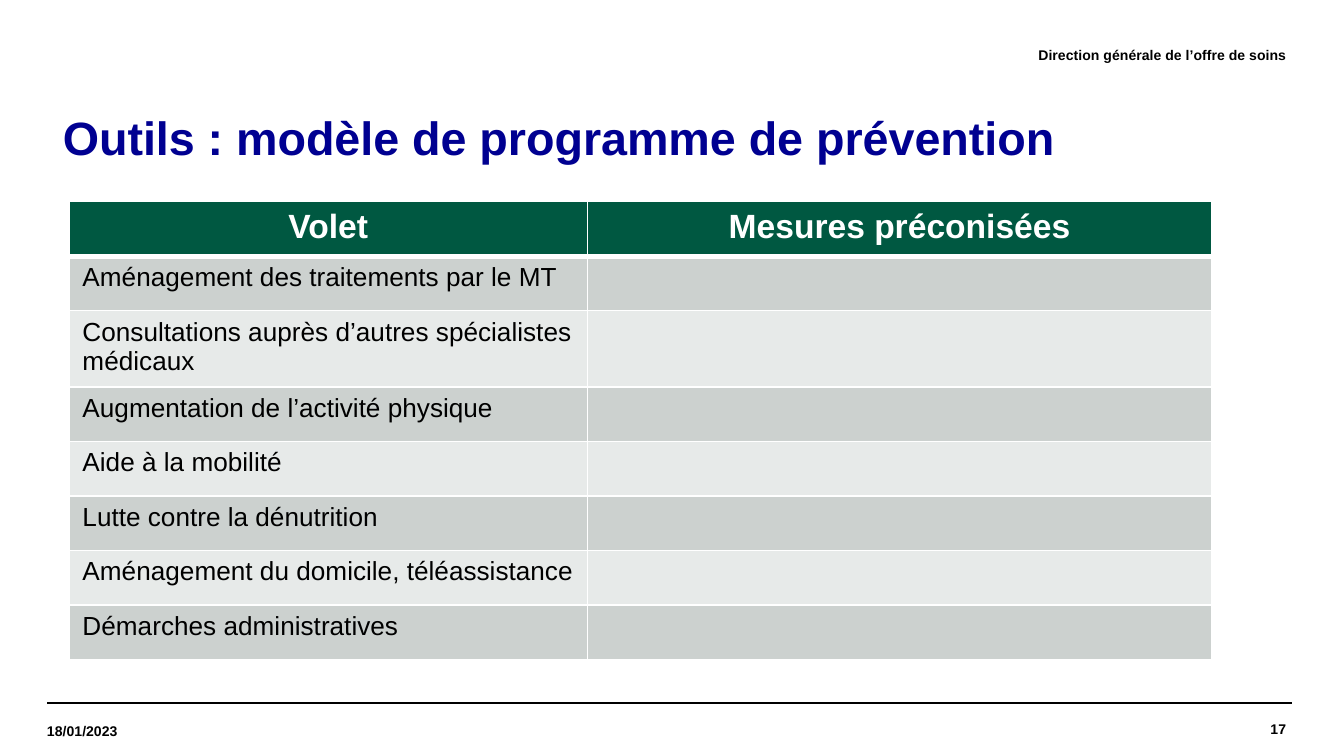
from dataclasses import dataclass

from lxml import etree
from pptx import Presentation
from pptx.dml.color import RGBColor
from pptx.enum import shapes, text
from pptx.oxml.ns import qn
from pptx.util import Pt


@dataclass(frozen=True)
class Theme:
    font: str = "Arial"
    black: str = "000000"
    white: str = "FFFFFF"
    title: str = "000091"
    header: str = "005841"
    bands: tuple = ("CCD1CF", "E7EAE9")
    small_size: float = 7.5
    title_size: float = 25
    header_size: float = 18
    body_size: float = 14
    rule_width: float = 0.8


@dataclass(frozen=True)
class Label:
    words: str
    left: float
    top: float
    width: float
    height: float
    align: text.PP_ALIGN = text.PP_ALIGN.LEFT


THEME = Theme()
RIGHT = text.PP_ALIGN.RIGHT

TITLE = Label("Outils : modèle de programme de prévention", 25.2, 54, 663, 42.5)
LABELS = (
    Label("17", 582.5, 376.5, 106.5, 28, RIGHT),
    Label("18/01/2023", 25.2, 378, 92, 27.4),
    Label("Direction générale de l’offre de soins", 226, 15.2, 463, 28, RIGHT),
)
RULE_LEFTS = (25.2, 28)
RULE_TOP, RULE_LENGTH = 376.6, 664

TABLE_LEFT, TABLE_TOP, ROW_HEIGHT = 37, 108, 29.2
COLUMN_WIDTHS = (277.7, 334.5)
HEADERS = ("Volet", "Mesures préconisées")
MEASURES = (
    "Aménagement des traitements par le MT",
    "Consultations auprès d’autres spécialistes médicaux",
    "Augmentation de l’activité physique",
    "Aide à la mobilité",
    "Lutte contre la dénutrition",
    "Aménagement du domicile, téléassistance",
    "Démarches administratives",
)


def style_font(font, size: float, color: str, bold: bool) -> None:
    font.name, font.size, font.bold = THEME.font, Pt(size), bold
    font.color.rgb = RGBColor.from_string(color)


def add_label(page, label: Label, size: float, color: str, inset: bool = False):
    """Add a bold, vertically centred text box and return its paragraph."""
    box = page.shapes.add_textbox(
        Pt(label.left), Pt(label.top), Pt(label.width), Pt(label.height))
    frame = box.text_frame
    frame.word_wrap = True
    frame.vertical_anchor = text.MSO_ANCHOR.MIDDLE
    if not inset:
        frame.margin_left = frame.margin_right = 0
        frame.margin_top = frame.margin_bottom = 0
    para = frame.paragraphs[0]
    para.text, para.alignment = label.words, label.align
    style_font(para.font, size, color, True)
    return para


def add_rule(page, left: float) -> None:
    rule = page.shapes.add_connector(
        shapes.MSO_CONNECTOR.STRAIGHT,
        Pt(left), Pt(RULE_TOP), Pt(left + RULE_LENGTH), Pt(RULE_TOP))
    rule.line.width = Pt(THEME.rule_width)
    rule.line.color.rgb = RGBColor.from_string(THEME.black)
    etree.SubElement(rule._element.spPr, qn("a:effectLst"))


def set_borders(cell, top: float, bottom: float) -> None:
    properties = cell._tc.get_or_add_tcPr()
    for side, width in (("L", 1), ("R", 1), ("T", top), ("B", bottom)):
        line = etree.SubElement(properties, qn(f"a:ln{side}"), w=str(Pt(width)))
        fill = etree.SubElement(line, qn("a:solidFill"))
        etree.SubElement(fill, qn("a:srgbClr"), val=THEME.white)


def fill_cell(cell, words: str, row: int) -> None:
    is_header = row == 0
    set_borders(cell, 3 if row == 1 else 1, 3 if is_header else 1)
    cell.fill.solid()
    color = THEME.header if is_header else THEME.bands[(row - 1) % 2]
    cell.fill.fore_color.rgb = RGBColor.from_string(color)
    para = cell.text_frame.paragraphs[0]
    if words:
        para.text = words
    if is_header:
        para.alignment = text.PP_ALIGN.CENTER
        style_font(para.font, THEME.header_size, THEME.white, True)
    else:
        style_font(para.font, THEME.body_size, THEME.black, False)


def add_measures_table(page) -> None:
    rows = [HEADERS] + [(measure, "") for measure in MEASURES]
    table = page.shapes.add_table(
        len(rows), len(HEADERS), Pt(TABLE_LEFT), Pt(TABLE_TOP),
        Pt(sum(COLUMN_WIDTHS)), Pt(ROW_HEIGHT * len(rows))).table
    table.horz_banding = False
    for column, width in zip(table.columns, COLUMN_WIDTHS):
        column.width = Pt(width)
    for row, values in enumerate(rows):
        table.rows[row].height = Pt(ROW_HEIGHT)
        for column, words in enumerate(values):
            fill_cell(table.cell(row, column), words, row)


def main() -> None:
    deck = Presentation()
    deck.slide_width, deck.slide_height = Pt(720), Pt(405)
    page = deck.slides.add_slide(deck.slide_layouts[6])
    for left in RULE_LEFTS:
        add_rule(page, left)
    for label in LABELS:
        add_label(page, label, THEME.small_size, THEME.black)
    title = add_label(page, TITLE, THEME.title_size, THEME.title, inset=True)
    title.line_spacing = 0.9
    title._p.get_or_add_pPr().set("marL", str(Pt(1.4)))
    add_measures_table(page)
    deck.save("out.pptx")


if __name__ == "__main__":
    main()
